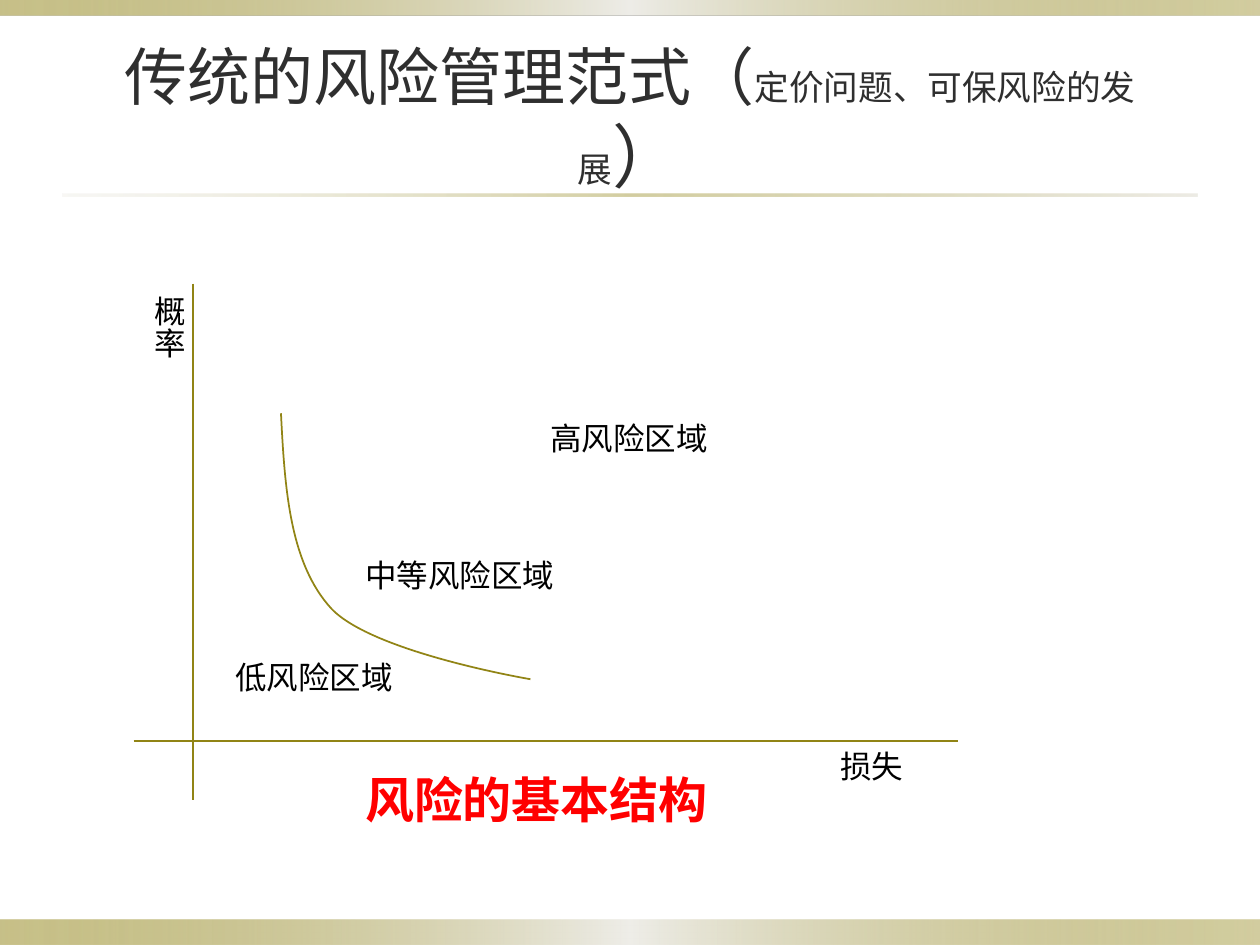
from dataclasses import dataclass
from typing import NamedTuple

from pptx import Presentation
from pptx.dml.color import RGBColor
from pptx.enum.shapes import MSO_CONNECTOR as Connector, MSO_SHAPE as Shape
from pptx.enum.text import MSO_ANCHOR as Anchor, PP_ALIGN as Align
from pptx.oxml.ns import qn
from pptx.oxml.xmlchemy import OxmlElement
from pptx.util import Inches, Pt

WIDTH, HEIGHT = Inches(10), Inches(7.5)
FONT = "Roboto"
OLIVE = RGBColor(0x91, 0x84, 0x15)
PALE = RGBColor(0xEE, 0xED, 0xE8)
SAND = RGBColor(0xDC, 0xD9, 0xCC)
CHARCOAL = RGBColor(0x2F, 0x2F, 0x2F)
BLACK = RGBColor(0, 0, 0)
RED = RGBColor(0xFF, 0, 0)


class Point(NamedTuple):
    """A place in percent of the slide's width and height."""
    x: float
    y: float


class Area(NamedTuple):
    """A rectangle in percent of the slide's width and height."""
    left: float
    top: float
    width: float
    height: float


class Stop(NamedTuple):
    position: int
    color: RGBColor
    opacity: int = 100


@dataclass
class Band:
    area: Area
    stops: tuple[Stop, ...]


@dataclass
class Label:
    text: str
    area: Area
    size: float = 18
    color: RGBColor = BLACK
    bold: bool = False
    vertical: bool = False


EDGE = (Stop(0, OLIVE, 50), Stop(50, PALE), Stop(100, OLIVE, 40))
RULE = (Stop(0, SAND, 20), Stop(50, OLIVE, 40), Stop(100, SAND, 50))
BANDS = (
    Band(Area(0, 97.33, 100, 2.67), EDGE),
    Band(Area(0, 0, 100, 1.6), EDGE),
    Band(Area(5, 20.53, 90, 0.27), RULE),
)
TITLE_AREA = Area(5, 4, 90, 16.67)
TITLE_PARTS = (("传统的风险管理范式（", 36), ("定价问题、可保风险的发展", 19.8), ("）", 39.6))
AXES = (
    (Point(15.3, 30), Point(15.3, 84.67)),
    (Point(10.6, 78.4), Point(76, 78.4)),
)
# Start, then two control points and an end point for each segment
CURVE = (
    Point(22.3, 43.73),
    Point(22.6, 51.73), Point(23, 59.6), Point(26.3, 64.4),
    Point(29.6, 69.07), Point(42.1, 71.87), Point(42.1, 71.87),
)
LABELS = (
    Label("概率", Area(10.3, 30, 5.1, 10.53), vertical=True),
    Label("损失", Area(65.7, 78.4, 10.2, 5.33)),
    Label("低风险区域", Area(17.7, 68.93, 18.9, 5.33)),
    Label("高风险区域", Area(42.7, 43.73, 33.3, 5.33)),
    Label("中等风险区域", Area(28, 58.13, 21.3, 5.33)),
    Label("风险的基本结构", Area(28, 80.8, 32.3, 7.6), 28, RED, bold=True),
)


def across(share: float) -> int:
    return round(WIDTH * share / 100)


def down(share: float) -> int:
    return round(HEIGHT * share / 100)


def place(area: Area) -> tuple[int, int, int, int]:
    return across(area.left), down(area.top), across(area.width), down(area.height)


def style_line(line) -> None:
    line.color.rgb = OLIVE
    line.width = Pt(1)


def style_run(run, size: float, color: RGBColor, bold: bool = False) -> None:
    run.font.name = FONT
    run.font.size = Pt(size)
    run.font.color.rgb = color
    run.font.bold = bold


def add_band(page, band: Band) -> None:
    box = page.shapes.add_shape(Shape.RECTANGLE, *place(band.area))
    box.shadow.inherit = False
    box.line.fill.background()
    box.fill.gradient()
    box.fill.gradient_angle = 0
    stop_list = box._element.spPr.find(".//" + qn("a:gsLst"))
    stop_list[:] = []
    for stop in band.stops:
        entry = OxmlElement("a:gs")
        entry.set("pos", str(stop.position * 1000))
        color = OxmlElement("a:srgbClr")
        color.set("val", str(stop.color))
        alpha = OxmlElement("a:alpha")
        alpha.set("val", str(stop.opacity * 1000))
        color.append(alpha)
        entry.append(color)
        stop_list.append(entry)


def add_title(page) -> None:
    frame = page.shapes.add_textbox(*place(TITLE_AREA)).text_frame
    frame.word_wrap = True
    frame.vertical_anchor = Anchor.MIDDLE
    para = frame.paragraphs[0]
    para.alignment = Align.CENTER
    for text, size in TITLE_PARTS:
        span = para.add_run()
        span.text = text
        style_run(span, size, CHARCOAL)


def add_axis(page, start: Point, end: Point) -> None:
    axis = page.shapes.add_connector(
        Connector.STRAIGHT, across(start.x), down(start.y), across(end.x), down(end.y))
    style_line(axis.line)
    axis._element.spPr.append(OxmlElement("a:effectLst"))


def add_curve(page, points: tuple[Point, ...]) -> None:
    """Draw the points as a polyline, then join each three into one Bézier segment."""
    start, *rest = [(round(point.x * 100), round(point.y * 100)) for point in points]
    builder = page.shapes.build_freeform(*start, scale=(WIDTH / 10000, HEIGHT / 10000))
    builder.add_line_segments(rest, close=False)
    curve = builder.convert_to_shape()
    curve.shadow.inherit = False
    curve.fill.background()
    style_line(curve.line)
    outline = curve._element.spPr.find(".//" + qn("a:path"))
    steps = outline.findall(qn("a:lnTo"))
    for first in range(0, len(steps), 3):
        segment = OxmlElement("a:cubicBezTo")
        for step in steps[first:first + 3]:
            segment.append(step[0])
            outline.remove(step)
        outline.append(segment)


def add_label(page, label: Label) -> None:
    frame = page.shapes.add_textbox(*place(label.area)).text_frame
    frame.word_wrap = True
    frame.text = label.text
    style_run(frame.paragraphs[0].runs[0], label.size, label.color, label.bold)
    if label.vertical:
        frame._txBody.bodyPr.set("vert", "eaVert")


def main() -> None:
    deck = Presentation()
    deck.slide_width, deck.slide_height = WIDTH, HEIGHT
    page = deck.slides.add_slide(deck.slide_layouts[6])
    for band in BANDS:
        add_band(page, band)
    add_title(page)
    for start, end in AXES:
        add_axis(page, start, end)
    add_curve(page, CURVE)
    for label in LABELS:
        add_label(page, label)
    deck.save("out.pptx")


if __name__ == "__main__":
    main()
